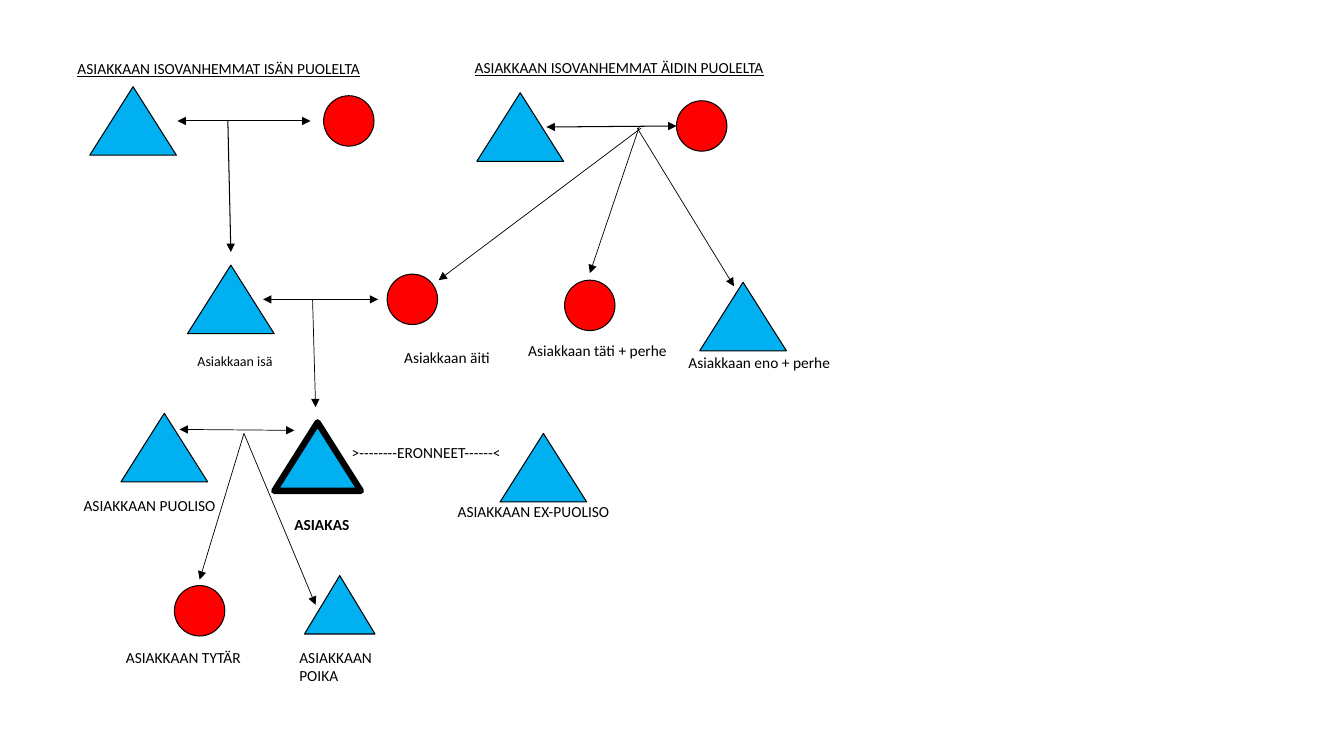
from dataclasses import dataclass

from lxml import etree
from pptx import Presentation
from pptx.dml.color import RGBColor
from pptx.enum.shapes import MSO_CONNECTOR, MSO_SHAPE
from pptx.oxml.ns import qn
from pptx.util import Inches, Pt

TRIANGLE = MSO_SHAPE.ISOSCELES_TRIANGLE
CIRCLE = MSO_SHAPE.FLOWCHART_CONNECTOR
STRAIGHT = MSO_CONNECTOR.STRAIGHT


@dataclass(frozen=True)
class Theme:
    font: str = "Calibri"
    ink: RGBColor = RGBColor(0, 0, 0)
    male: RGBColor = RGBColor(0x00, 0xB0, 0xF0)
    female: RGBColor = RGBColor(0xFF, 0, 0)
    text: float = 11
    small: float = 10
    thin: float = 0.5
    line: float = 0.75
    thick: float = 4.5


class Chart:
    def __init__(self, slide, theme):
        self.slide = slide
        self.theme = theme

    def person(self, kind, fill, left, top, width, height, weight):
        shape = self.slide.shapes.add_shape(
            kind, Inches(left), Inches(top), Inches(width), Inches(height))
        shape.shadow.inherit = False
        shape.fill.solid()
        shape.fill.fore_color.rgb = fill
        shape.line.color.rgb = self.theme.ink
        shape.line.width = Pt(weight)

    def man(self, left, top, width=0.86, height=0.68, weight=None):
        self.person(TRIANGLE, self.theme.male, left, top, width, height,
                    weight or self.theme.line)

    def woman(self, left, top, size=0.5):
        self.person(CIRCLE, self.theme.female, left, top, size, size,
                    self.theme.line)

    def arrow(self, start, end, weight, ends=("tailEnd",)):
        points = [Inches(value) for value in (*start, *end)]
        link = self.slide.shapes.add_connector(STRAIGHT, *points)
        link.line.color.rgb = self.theme.ink
        link.line.width = Pt(weight)
        props = link.element.spPr
        line = props.find(qn("a:ln"))
        for end_name in ends:
            etree.SubElement(line, qn(f"a:{end_name}"), type="triangle")
        etree.SubElement(props, qn("a:effectLst"))

    def couple(self, start, end, weight):
        self.arrow(start, end, weight, ("headEnd", "tailEnd"))

    def label(self, text, left, top, width, size=None, bold=False, under=False):
        box = self.slide.shapes.add_textbox(
            Inches(left), Inches(top), Inches(width), Inches(0.29))
        frame = box.text_frame
        frame.word_wrap = False
        frame.text = text
        font = frame.paragraphs[0].runs[0].font
        font.name = self.theme.font
        font.size = Pt(size or self.theme.text)
        font.color.rgb = self.theme.ink
        font.bold = bold
        font.underline = under


def main():
    deck = Presentation()
    deck.slide_width = Inches(13.33)
    deck.slide_height = Inches(7.5)
    theme = Theme()
    chart = Chart(deck.slides.add_slide(deck.slide_layouts[6]), theme)

    for spot in ((0.89, 0.86), (4.73, 0.92), (1.86, 2.63),
                 (6.94, 2.8), (1.2, 4.1), (4.96, 4.3)):
        chart.man(*spot)
    chart.man(2.72, 4.19, weight=theme.thick)
    chart.man(3.02, 5.71, 0.7, 0.58)

    for spot in ((3.21, 0.95), (6.71, 1), (3.84, 2.72),
                 (5.6, 2.78), (1.73, 5.81)):
        chart.woman(*spot)

    for start, end, weight in (
            ((3.08, 1.2), (1.76, 1.2), theme.line),
            ((5.42, 1.26), (6.71, 1.25), theme.line),
            ((2.61, 2.97), (3.75, 2.97), theme.line),
            ((1.78, 4.26), (2.92, 4.27), theme.thin)):
        chart.couple(start, end, weight)

    for start, end, weight in (
            ((2.26, 1.2), (2.29, 2.5), theme.line),
            ((3.1, 2.97), (3.13, 4.04), theme.thin),
            ((6.34, 1.26), (5.85, 2.71), theme.thin),
            ((6.32, 1.27), (7.28, 2.84), theme.thin),
            ((6.36, 1.27), (4.35, 2.78), theme.thin),
            ((2.42, 4.3), (1.98, 5.75), theme.thin),
            ((2.42, 4.3), (3.13, 6), theme.thin)):
        chart.arrow(start, end, weight)

    chart.label("ASIAKKAAN ISOVANHEMMAT ISÄN PUOLELTA",
                0.67, 0.54, 3.01, under=True)
    chart.label("ASIAKKAAN ISOVANHEMMAT ÄIDIN PUOLELTA",
                4.61, 0.53, 3.13, under=True)
    chart.label("Asiakkaan isä", 1.86, 3.45, 0.95, size=theme.small)
    chart.label("ASIAKAS", 2.82, 5.06, 0.75, bold=True)
    for text, left, top, width in (
            ("Asiakkaan äiti", 3.91, 3.4, 1.06),
            ("Asiakkaan täti + perhe", 5.14, 3.33, 1.59),
            ("Asiakkaan eno + perhe", 6.73, 3.45, 1.62),
            ("ASIAKKAAN PUOLISO", 0.73, 4.87, 1.52),
            ("ASIAKKAAN EX-PUOLISO", 4.44, 4.93, 1.72),
            (">--------ERONNEET------<", 3.39, 4.35, 1.71),
            ("ASIAKKAAN TYTÄR", 1.15, 6.38, 1.34),
            ("ASIAKKAAN POIKA", 2.87, 6.38, 1.34)):
        chart.label(text, left, top, width)

    deck.save("out.pptx")


if __name__ == "__main__":
    main()
